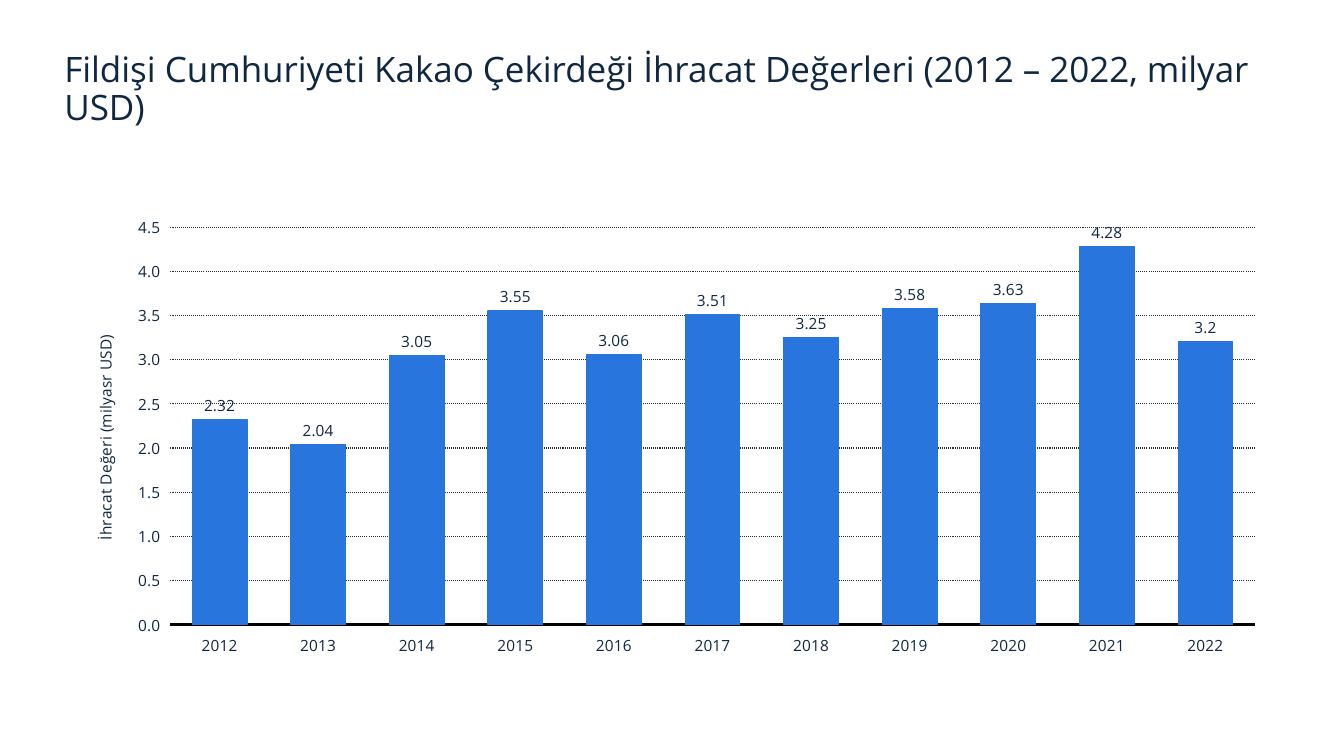
"""Build a slide with a column chart of cocoa bean export values."""

from dataclasses import dataclass

from pptx import Presentation
from pptx.chart.axis import CategoryAxis, ValueAxis
from pptx.chart.chart import Chart
from pptx.chart.data import CategoryChartData
from pptx.dml.color import RGBColor
from pptx.enum.chart import XL_CHART_TYPE, XL_LABEL_POSITION, XL_TICK_LABEL_POSITION, XL_TICK_MARK
from pptx.enum.dml import MSO_LINE
from pptx.enum.text import MSO_ANCHOR
from pptx.oxml import parse_xml
from pptx.oxml.ns import nsdecls, qn
from pptx.slide import Slide
from pptx.text.text import Font
from pptx.util import Pt

COLUMN_CLUSTERED = XL_CHART_TYPE.COLUMN_CLUSTERED
OUTSIDE_END = XL_LABEL_POSITION.OUTSIDE_END
LABELS_LOW = XL_TICK_LABEL_POSITION.LOW
NO_TICKS = XL_TICK_MARK.NONE
DOTTED = MSO_LINE.ROUND_DOT
BOTTOM = MSO_ANCHOR.BOTTOM

NAVY = RGBColor(0x0F, 0x27, 0x41)
BLUE = RGBColor(0x28, 0x75, 0xDD)
GRID_GREY = RGBColor(0x2F, 0x2F, 0x2F)
BLACK = RGBColor(0, 0, 0)
FONT_NAME = "Open Sans"
TITLE_SIZE = 25
CHART_TEXT_SIZE = 11

TITLE = "Fildişi Cumhuriyeti Kakao Çekirdeği İhracat Değerleri (2012 – 2022, milyar USD)"
VALUE_AXIS_TITLE = "İhracat Değeri (milyasr USD)"
YEARS = [str(year) for year in range(2012, 2023)]
EXPORT_VALUES = [2.32, 2.04, 3.05, 3.55, 3.06, 3.51, 3.25, 3.58, 3.63, 4.28, 3.2]


@dataclass(frozen=True)
class Box:
    """Position and size in points."""

    left: float
    top: float
    width: float
    height: float

    def lengths(self) -> tuple[Pt, Pt, Pt, Pt]:
        """Return the four lengths for a shape call."""
        return Pt(self.left), Pt(self.top), Pt(self.width), Pt(self.height)


TITLE_BOX = Box(38.9, 33.1, 881.3, 61.9)
CHART_BOX = Box(46.1, 148.3, 867.6, 326.9)
PLOT_BOX = Box(121.7, 162.2, 774.7, 284.2)
AXIS_TITLE_LEFT, AXIS_TITLE_TOP = 64.5, 237


def style_font(font: Font, size: float) -> None:
    """Apply the shared typeface and colour."""
    font.name = FONT_NAME
    font.size = Pt(size)
    font.color.rgb = NAVY


def set_layout(chart: Chart, parent_query: str, index: int, settings: dict[str, str | float]) -> None:
    """Give a chart part a manual layout."""
    parent = chart.element.xpath(parent_query)[0] if hasattr(chart, "element") else chart._chartSpace.xpath(parent_query)[0]
    for previous in parent.findall(qn("c:layout")):
        parent.remove(previous)
    entries = "".join(f'<c:{name} val="{value}"/>' for name, value in settings.items())
    layout = f'<c:layout {nsdecls("c")}><c:manualLayout>{entries}</c:manualLayout></c:layout>'
    parent.insert(index, parse_xml(layout))


def style_axis(axis: CategoryAxis | ValueAxis) -> None:
    """Apply the settings common to both axes."""
    axis.major_tick_mark = NO_TICKS
    axis.minor_tick_mark = NO_TICKS
    axis.tick_label_position = LABELS_LOW
    style_font(axis.tick_labels.font, CHART_TEXT_SIZE)


def style_axes(chart: Chart) -> None:
    """Format the year axis, the value axis and its gridlines."""
    year_axis, value_axis = chart.category_axis, chart.value_axis
    style_axis(year_axis)
    year_axis.format.line.color.rgb = BLACK
    year_axis.format.line.width = Pt(2)

    style_axis(value_axis)
    value_axis.minimum_scale = 0
    value_axis.maximum_scale = 4.5
    value_axis.major_unit = 0.5
    value_axis.tick_labels.number_format = "#,##0.0"
    value_axis.tick_labels.number_format_is_linked = False
    value_axis.format.line.fill.background()
    grid_line = value_axis.major_gridlines.format.line
    grid_line.color.rgb = GRID_GREY
    grid_line.width = Pt(0.75)
    grid_line.dash_style = DOTTED

    text_frame = value_axis.axis_title.text_frame
    text_frame.text = VALUE_AXIS_TITLE
    font = text_frame.paragraphs[0].runs[0].font
    style_font(font, CHART_TEXT_SIZE)
    font.bold = False


def add_export_chart(slide: Slide) -> None:
    """Add the column chart with its value labels."""
    data = CategoryChartData()
    data.categories = YEARS
    data.add_series("Series 1", EXPORT_VALUES)
    chart = slide.shapes.add_chart(COLUMN_CLUSTERED, *CHART_BOX.lengths(), data).chart
    chart.has_title = False
    chart.has_legend = False
    style_font(chart.font, CHART_TEXT_SIZE)
    style_axes(chart)

    plot = chart.plots[0]
    plot.gap_width = 80
    plot.overlap = -30
    plot.vary_by_categories = False
    series = plot.series[0]
    series.format.fill.solid()
    series.format.fill.fore_color.rgb = BLUE
    series.format.line.color.rgb = BLUE
    series.format.line.width = Pt(0.75)
    labels = series.data_labels
    labels.show_value = True
    labels.position = OUTSIDE_END
    style_font(labels.font, CHART_TEXT_SIZE)

    set_layout(chart, ".//c:plotArea", 0, {
        "layoutTarget": "inner",
        "xMode": "edge",
        "yMode": "edge",
        "x": round((PLOT_BOX.left - CHART_BOX.left) / CHART_BOX.width, 4),
        "y": round((PLOT_BOX.top - CHART_BOX.top) / CHART_BOX.height, 4),
        "w": round(PLOT_BOX.width / CHART_BOX.width, 4),
        "h": round(PLOT_BOX.height / CHART_BOX.height, 4),
    })
    set_layout(chart, ".//c:valAx/c:title", 1, {
        "xMode": "edge",
        "yMode": "edge",
        "x": round((AXIS_TITLE_LEFT - CHART_BOX.left) / CHART_BOX.width, 4),
        "y": round((AXIS_TITLE_TOP - CHART_BOX.top) / CHART_BOX.height, 4),
    })


def add_title(slide: Slide) -> None:
    """Add the slide heading."""
    text_frame = slide.shapes.add_textbox(*TITLE_BOX.lengths()).text_frame
    text_frame.word_wrap = True
    text_frame.vertical_anchor = BOTTOM
    text_frame.text = TITLE
    paragraph = text_frame.paragraphs[0]
    paragraph.line_spacing = 0.9
    style_font(paragraph.runs[0].font, TITLE_SIZE)


def main() -> None:
    """Create and save the presentation."""
    presentation = Presentation()
    presentation.slide_width = Pt(960)
    presentation.slide_height = Pt(540)
    slide = presentation.slides.add_slide(presentation.slide_layouts[6])
    add_export_chart(slide)
    add_title(slide)
    presentation.save("out.pptx")


if __name__ == "__main__":
    main()
